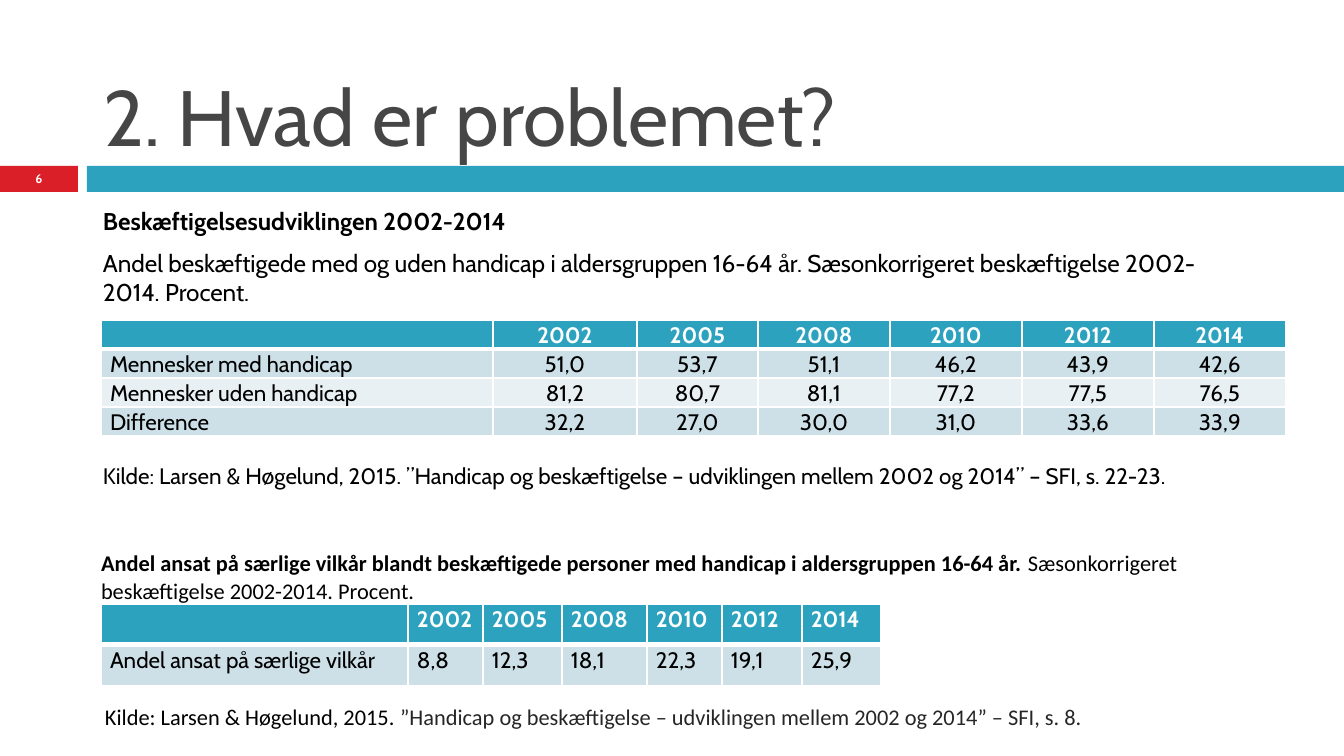
from lxml import etree
from pptx import Presentation
from pptx.dml.color import RGBColor
from pptx.enum.shapes import MSO_SHAPE
from pptx.enum.text import MSO_ANCHOR, PP_ALIGN
from pptx.oxml.ns import qn
from pptx.util import Pt

RECT = MSO_SHAPE.RECTANGLE
TOP, MID, LOW = MSO_ANCHOR.TOP, MSO_ANCHOR.MIDDLE, MSO_ANCHOR.BOTTOM
LEFT, CENTER = PP_ALIGN.LEFT, PP_ALIGN.CENTER
RED = RGBColor(0xDA, 0x1F, 0x28)
TEAL = RGBColor(0x2D, 0xA2, 0xBF)
PALE = RGBColor(0xCD, 0xE0, 0xE8)
LIGHT = RGBColor(0xE8, 0xF0, 0xF4)
GRAY = RGBColor(0x46, 0x46, 0x46)
DARK = RGBColor(0x26, 0x26, 0x26)
BLACK = RGBColor(0, 0, 0)
WHITE = RGBColor(0xFF, 0xFF, 0xFF)

HEAD = {"name": "Cabin", "size": 42, "color": GRAY}
PAGE = {"name": "Cabin", "size": 6.7, "color": WHITE, "bold": True}
BODY = {"name": "Cabin", "size": 13, "color": BLACK, "bold": False}
CELL = BODY | {"size": 12}
NOTE = CELL | {"name": "Calibri"}
YEARS = ["2002", "2005", "2008", "2010", "2012", "2014"]


def px(n):
    """Turn pixels into EMU."""
    return round(n * 914400 / 134.4)


def style(font, form):
    """Set the font from a dict of format values."""
    for key, value in form.items():
        if key == "color":
            font.color.rgb = value
        else:
            setattr(font, key, Pt(value) if key == "size" else value)


def fill_text(frame, paras, anchor=TOP, align=LEFT, **spacing):
    """Write paragraphs, each a list of text and format pairs."""
    frame.word_wrap = True
    frame.vertical_anchor = anchor
    for side in ("left", "top", "right", "bottom"):
        setattr(frame, f"margin_{side}", 0)
    for i, runs in enumerate(paras):
        para = frame.add_paragraph() if i else frame.paragraphs[0]
        para.alignment = align
        for key, value in spacing.items():
            setattr(para, key, value)
        for text, form in runs:
            run = para.add_run()
            run.text = text
            style(run.font, form)


def add_text(slide, box, paras, **kind):
    """Add a text box to the given box."""
    shape = slide.shapes.add_textbox(*map(px, box))
    fill_text(shape.text_frame, paras, **kind)


def add_bar(slide, box, color):
    """Add a plain filled bar."""
    bar = slide.shapes.add_shape(RECT, *map(px, box))
    bar.shadow.inherit = False
    bar.fill.solid()
    bar.fill.fore_color.rgb = color
    bar.line.fill.background()
    return bar


def add_edges(cell, row):
    """Draw white cell borders, with a thick one under the header."""
    props = cell._tc.get_or_add_tcPr()
    widths = {"L": 1, "R": 1, "T": 3 if row == 1 else 1, "B": 1 if row else 3}
    for i, (side, width) in enumerate(widths.items()):
        line = etree.Element(qn(f"a:ln{side}"), w=str(Pt(width)))
        solid = etree.SubElement(line, qn("a:solidFill"))
        etree.SubElement(solid, qn("a:srgbClr"), val=str(WHITE))
        props.insert(i, line)


def add_grid(slide, left, top, cols, high, rows, align):
    """Add a table with a teal header and banded rows."""
    frame = slide.shapes.add_table(len(rows), len(cols), px(left), px(top),
                                   px(sum(cols)), px(high * len(rows)))
    table = frame.table
    for col, wide in zip(table.columns, cols):
        col.width = px(wide)
    for r, row in enumerate(rows):
        table.rows[r].height = px(high)
        form = CELL if r else CELL | {"color": WHITE, "bold": True}
        for c, text in enumerate(row):
            cell = table.cell(r, c)
            fill_text(cell.text_frame, [[(text, form)] if text else []],
                      align=align if c else LEFT, line_spacing=1.07)
            end = cell.text_frame.paragraphs[0]._p.get_or_add_endParaRPr()
            end.set("sz", "1200")
            cell.margin_left = cell.margin_right = px(9)
            cell.margin_top = cell.margin_bottom = 0
            cell.fill.solid()
            cell.fill.fore_color.rgb = (LIGHT, PALE)[r % 2] if r else TEAL
            add_edges(cell, r)


def add_head(slide, left, top, wide, high):
    """Add the title above the page number and the bar."""
    add_text(slide, (left + 103, top, wide - 172, high - 30),
             [[("2. Hvad er problemet?", HEAD)]], anchor=LOW)
    line = top + high - 26
    page = add_bar(slide, (left, line, 78, 26), RED)
    fill_text(page.text_frame, [[("6", PAGE)]], anchor=MID, align=CENTER)
    add_bar(slide, (left + 87, line, wide - 87, 26), TEAL)


def add_jobs(slide, left, top):
    """Add the employment table with its lead and source."""
    add_text(slide, (left + 2, top, 1128, 110), [
        [("Beskæftigelsesudviklingen 2002-2014", BODY | {"bold": True})],
        [("Andel beskæftigede med og uden handicap i aldersgruppen 16-64 år. "
          "Sæsonkorrigeret beskæftigelse 2002-2014. Procent.", BODY)],
    ], space_before=Pt(7))
    add_grid(slide, left, top + 114, [392, 144, 121] + [132] * 4, 29, [
        ["", *YEARS],
        ["Mennesker med handicap",
         "51,0", "53,7", "51,1", "46,2", "43,9", "42,6"],
        ["Mennesker uden handicap",
         "81,2", "80,7", "81,1", "77,2", "77,5", "76,5"],
        ["Difference", "32,2", "27,0", "30,0", "31,0", "33,6", "33,9"],
    ], CENTER)
    add_text(slide, (left + 2, top + 256, 1128, 30), [
        [("Kilde: Larsen & Høgelund, 2015. ”Handicap og beskæftigelse – "
          "udviklingen mellem 2002 og 2014” – SFI, s. 22-23.", CELL)]])


def add_terms(slide, left, top):
    """Add the special terms table with its lead and source."""
    add_text(slide, (left, top, 1174, 58), [
        [("Andel ansat på særlige vilkår blandt beskæftigede personer med "
          "handicap i aldersgruppen 16-64 år. ", NOTE | {"bold": True}),
         ("Sæsonkorrigeret beskæftigelse 2002-2014. Procent.", NOTE)],
    ], line_spacing=1.07)
    add_grid(slide, left, top + 57, [307, 75, 79, 85, 75, 80, 79], 41, [
        ["", *YEARS],
        ["Andel ansat på særlige vilkår",
         "8,8", "12,3", "18,1", "22,3", "19,1", "25,9"],
    ], LEFT)
    add_text(slide, (left + 4, top + 154, 1100, 30), [
        [("Kilde: Larsen & Høgelund, 2015. ", NOTE),
         ("”Handicap og beskæftigelse – udviklingen mellem 2002 og 2014” "
          "– SFI, s. 8.", NOTE | {"color": DARK})],
    ], line_spacing=1.07)


def main():
    """Build the slide and save it."""
    deck = Presentation()
    deck.slide_width, deck.slide_height = px(1344), px(756)
    slide = deck.slides.add_slide(deck.slide_layouts[6])
    add_head(slide, 0, 0, 1344, 192)
    add_jobs(slide, 101, 206)
    add_terms(slide, 101, 547)
    deck.save("out.pptx")


if __name__ == "__main__":
    main()
